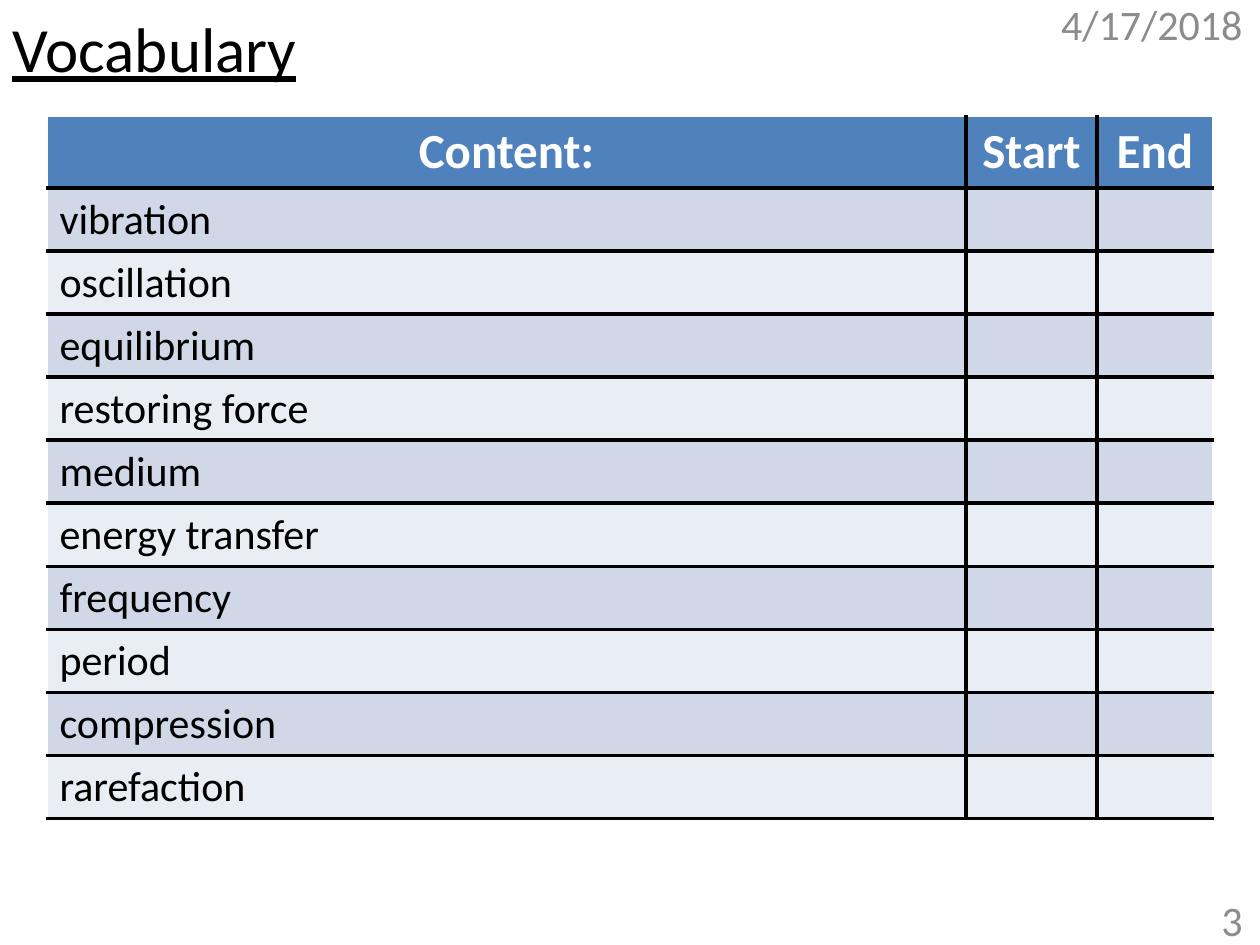
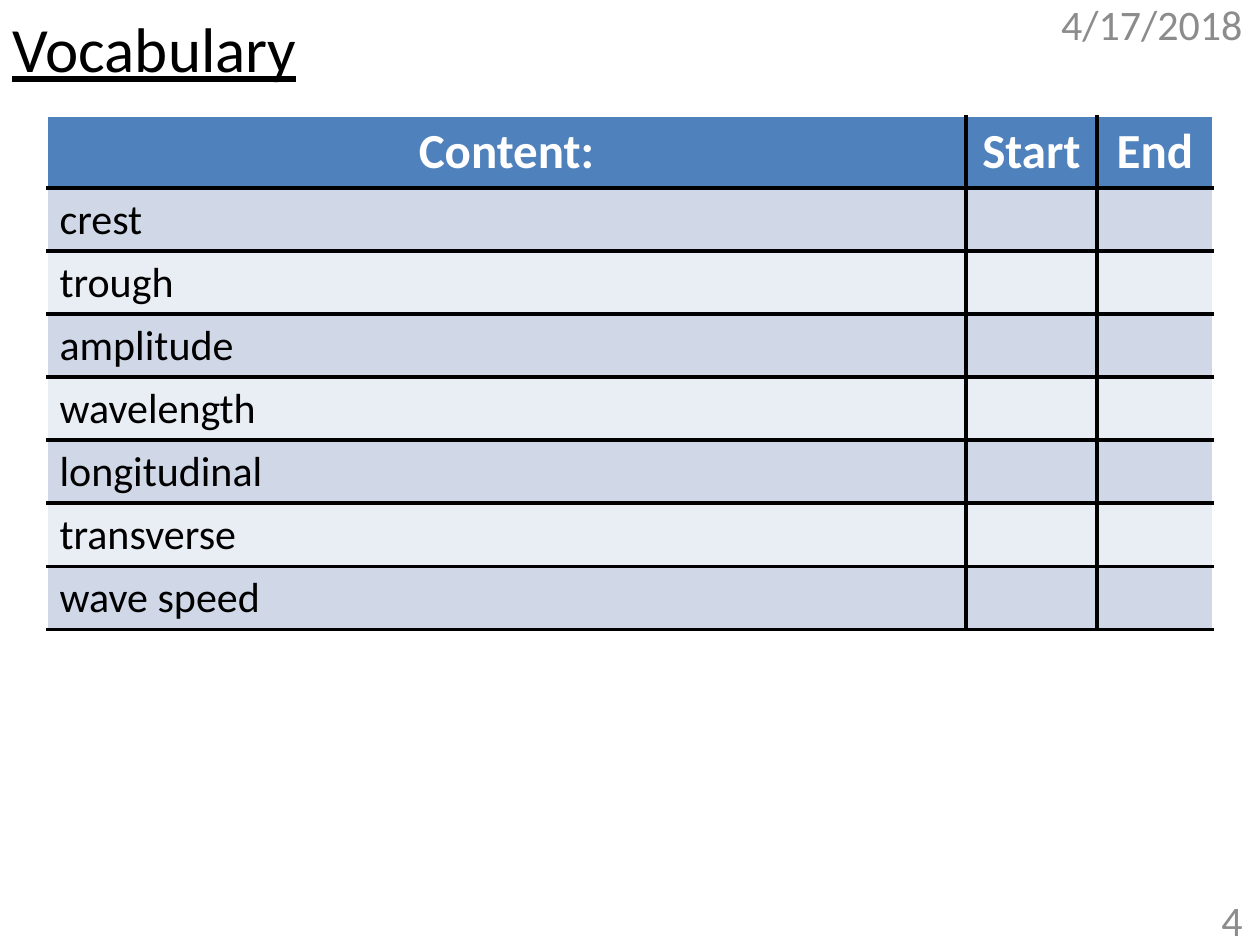
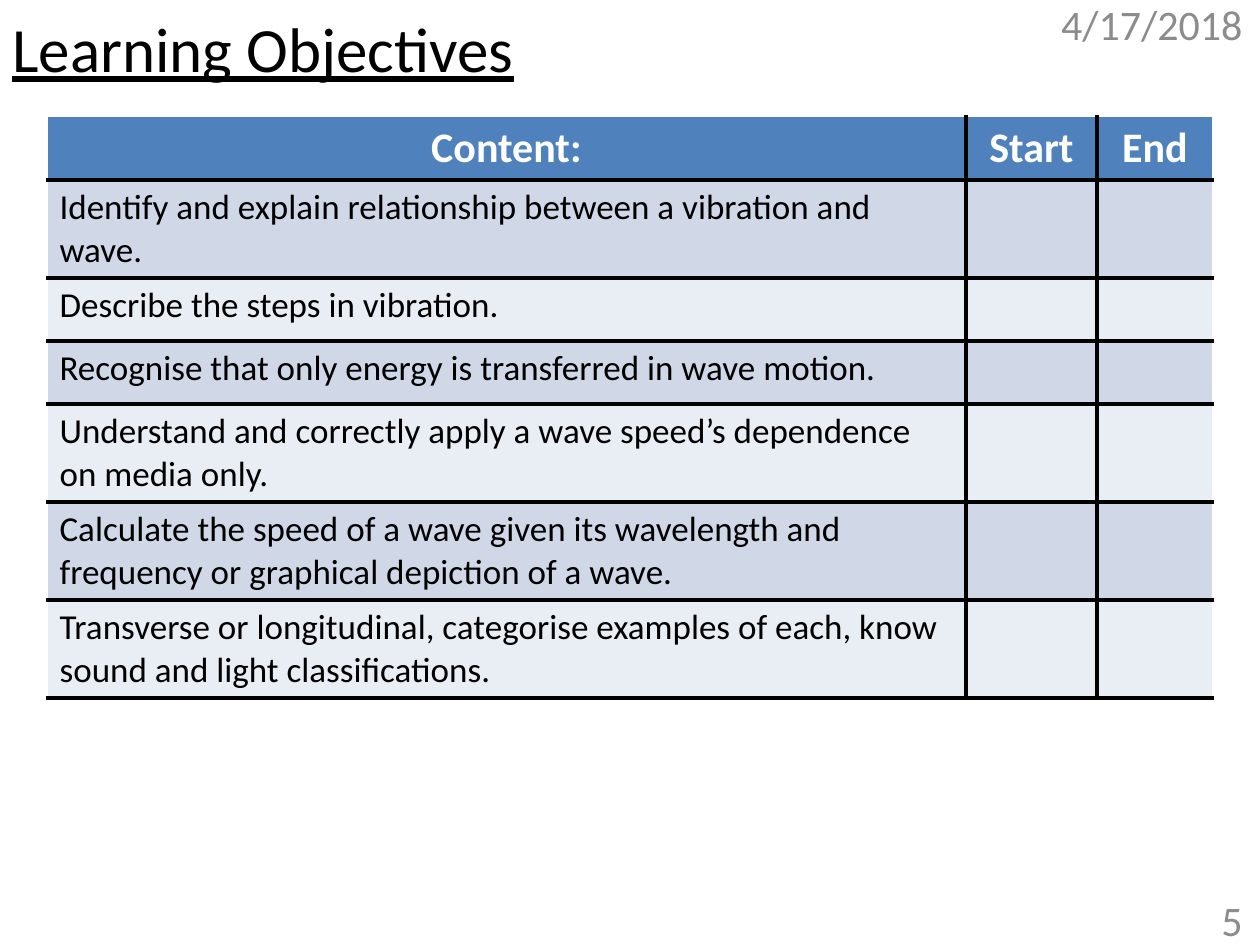
from lxml import etree
from pptx import Presentation
from pptx import util as u
from pptx.dml.color import RGBColor
from pptx.enum import text
from pptx.oxml import ns

BLACK = RGBColor(0x00, 0x00, 0x00)
WHITE = RGBColor(0xFF, 0xFF, 0xFF)
GREY = RGBColor(0x8C, 0x8C, 0x8C)
BLUE = RGBColor(0x4F, 0x81, 0xBD)
BANDS = [RGBColor(0xE9, 0xED, 0xF4), RGBColor(0xD0, 0xD8, 0xE8)]

LEFT, MID, RIGHT = text.PP_ALIGN.LEFT, text.PP_ALIGN.CENTER, text.PP_ALIGN.RIGHT
PX = 914400 / 126

# Formats of the shared parts
TITLE = {"size": u.Pt(36), "underline": True}
SMALL = {"size": u.Pt(24)}
COLS = [919, 131, 116]
HEADS = ["Content:", "Start", "End"]


def write(frame, words, form, color, align):
    para = frame.paragraphs[0]
    para.alignment = align
    run = para.add_run()
    run.text = words
    run.font.color.rgb = color
    for key, val in {"name": "Calibri", **form}.items():
        setattr(run.font, key, val)


def edge(cell, sides):
    props = cell._tc.get_or_add_tcPr()
    for tag, (color, width) in sides.items():
        line = etree.SubElement(props, ns.qn("a:" + tag), w=str(u.Pt(width)))
        fill = etree.SubElement(line, ns.qn("a:solidFill"))
        etree.SubElement(fill, ns.qn("a:srgbClr"), val=str(color))


# Title, head size, body size, head height, rows of (height, words)
vocab = [
    "vibration oscillation equilibrium restoring_force medium energy_transfer "
    "frequency period compression rarefaction",
    "crest trough amplitude wavelength longitudinal transverse wave_speed",
]
pages = [
    ("Vocabulary", 28, 24, 72, [(63, word.replace("_", " ")) for word in group.split()])
    for group in vocab
]
goals = [
    (98, "Identify and explain relationship between a vibration and wave."),
    (63, "Describe the steps in vibration."),
    (63, "Recognise that only energy is transferred in wave motion."),
    (98, "Understand and correctly apply a wave speed’s dependence on media only."),
    (98, "Calculate the speed of a wave given its wavelength and frequency or "
         "graphical depiction of a wave."),
    (98, "Transverse or longitudinal, categorise examples of each, know sound and "
         "light classifications."),
]
pages.append(("Learning Objectives", 24, 20, 64, goals))

prs = Presentation()
prs.slide_width, prs.slide_height = u.Inches(10), u.Inches(7.5)

for num, (title, big, small, top, rows) in enumerate(pages, 3):
    slide = prs.slides.add_slide(prs.slide_layouts[6])

    # Title, date and page number
    for words, place, form, color, align in [
        (title, (0, 0, 1134, 95), TITLE, BLACK, LEFT),
        ("4/17/2018", (1040, -1, 215, 50), SMALL, GREY, RIGHT),
        (str(num), (1176, 895, 79, 50), SMALL, GREY, RIGHT),
    ]:
        frame = slide.shapes.add_textbox(*[round(n * PX) for n in place]).text_frame
        frame.word_wrap = True
        frame.vertical_anchor = text.MSO_ANCHOR.MIDDLE
        frame.margin_top = frame.margin_bottom = 0
        write(frame, words, form, color, align)

    # Table
    highs = [top] + [high for high, _ in rows]
    place = (47, 116, sum(COLS), sum(highs))
    grid = slide.shapes.add_table(
        len(highs), len(COLS), *[round(n * PX) for n in place]).table
    for col, wide in zip(grid.columns, COLS):
        col.width = round(wide * PX)
    for row, high in zip(grid.rows, highs):
        row.height = round(high * PX)

    # Cells
    lines = [HEADS] + [[words, "", ""] for _, words in rows]
    thick, thin = (BLACK, 2.25), (WHITE, 1)
    for r, line in enumerate(lines):
        for c, words in enumerate(line):
            cell = grid.cell(r, c)
            edge(cell, {
                "lnL": thick if c else thin,
                "lnR": thick if c < 2 else thin,
                "lnT": thick if r else thin,
                "lnB": thick,
            })
            cell.fill.solid()
            cell.fill.fore_color.rgb = BANDS[r % 2] if r else BLUE
            if r == 0:
                cell.vertical_anchor = text.MSO_ANCHOR.MIDDLE
                write(cell.text_frame, words, {"size": u.Pt(big), "bold": True}, WHITE, MID)
            elif words:
                write(cell.text_frame, words, {"size": u.Pt(small), "bold": False}, BLACK, LEFT)

prs.save("out.pptx")
